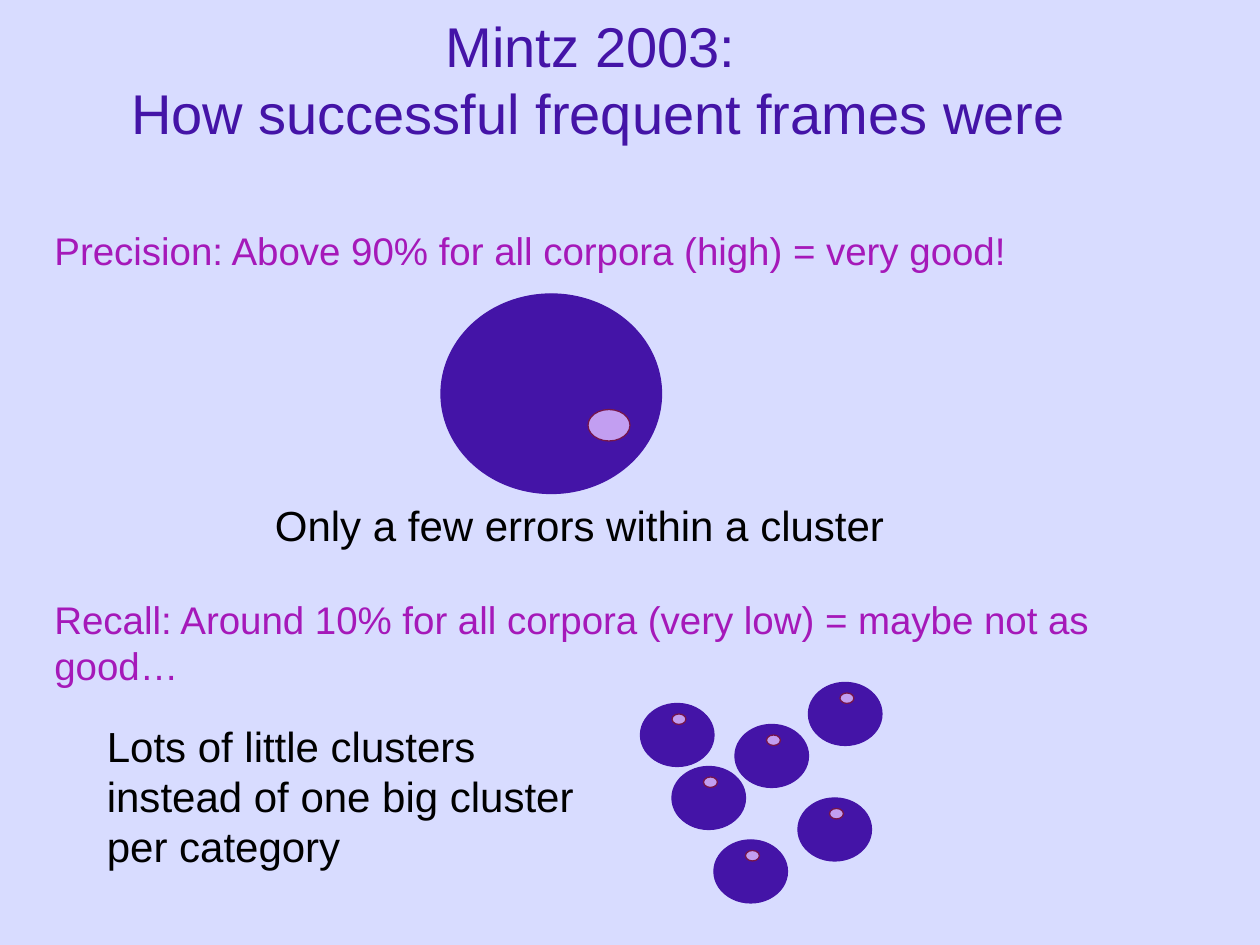
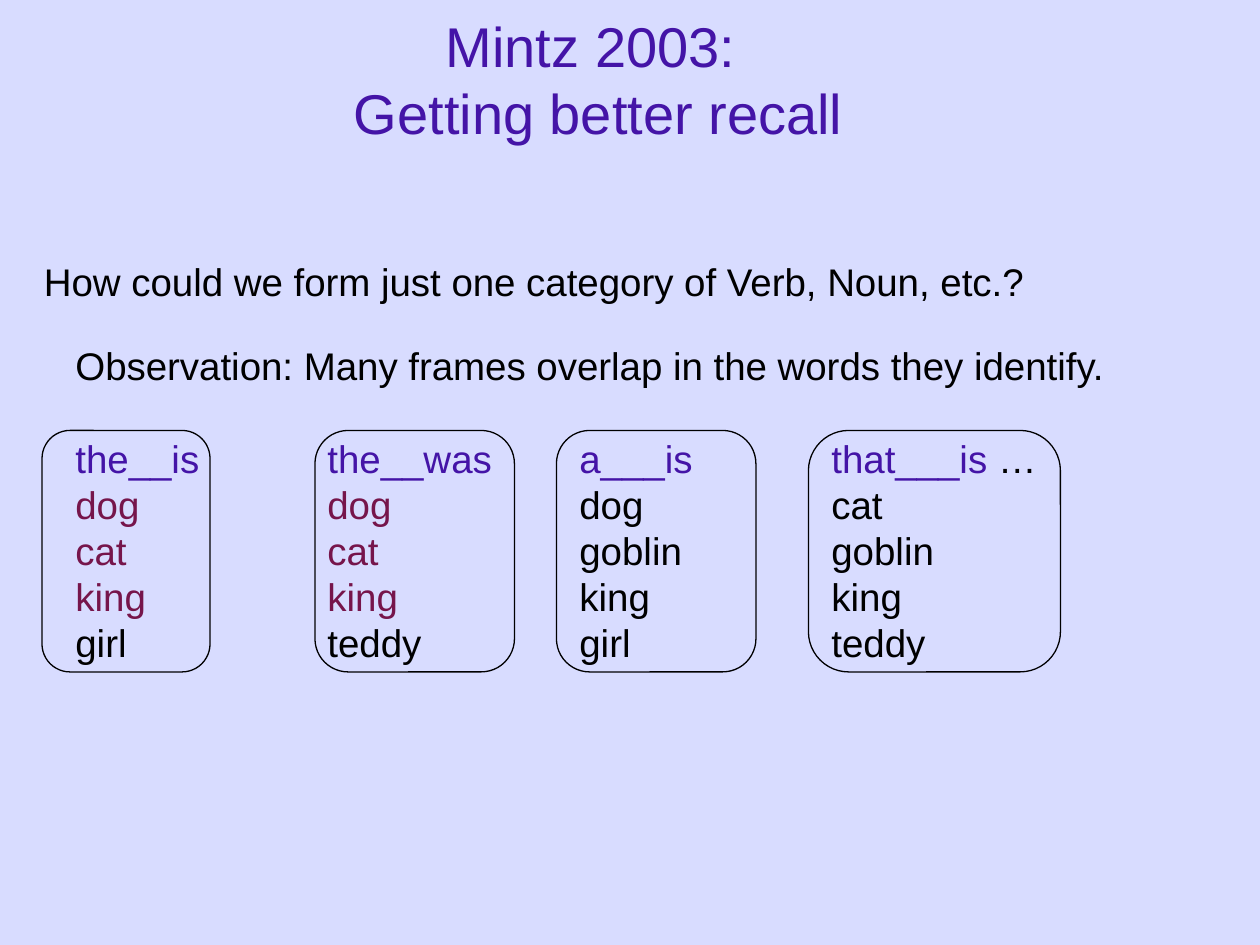
from copy import deepcopy

from lxml import etree
from pptx import Presentation
from pptx.dml.color import RGBColor
from pptx.enum import shapes, text
from pptx.oxml import ns
from pptx.util import Pt

FONT = "Arial"
LINE_HEIGHT = 1.2
COLOURS = {
    "background": "D8DCFF",
    "indigo": "4414A7",
    "magenta": "A519B9",
    "lilac": "C29EF1",
    "wine": "76154B",
    "black": "000000",
}

CLUSTER_SIZE = (42, 36)
CLUSTER_SPOTS = [(420, 414), (366, 402), (384, 438),
                 (462, 390), (456, 456), (408, 480)]

COLUMN_PITCH = 144
FRAMES = ["the__is", "the__was", "a___is", "that___is"]
WORD_ROWS = [
    ["dog", "dog", "dog", "cat"],
    ["cat", "cat", "goblin", "goblin"],
    ["king", "king", "king", "king"],
    ["girl", "teddy", "girl", "teddy"],
]
SHARED_ROWS = 3     # rows whose words match in the first two frames
OUTLINES = [(24, 96), (180, 114), (318, 114), (462, 144)]  # left, width


def colour(name):
    return RGBColor.from_string(COLOURS[name])


def points(*lengths):
    return [Pt(length) for length in lengths]


def format_span(span, size, tint):
    span.font.name = FONT
    span.font.size = Pt(size)
    span.font.color.rgb = colour(tint)


def add_title_page(deck, title):
    page = deck.slides.add_slide(deck.slide_layouts.get_by_name("Title Only"))
    box = page.shapes.title
    box.left, box.top, box.width, box.height = points(18, 0, 648, 90)
    frame = box.text_frame
    frame.word_wrap = True
    frame.auto_size = text.MSO_AUTO_SIZE.NONE
    frame.vertical_anchor = text.MSO_ANCHOR.MIDDLE
    para = frame.paragraphs[0]
    para.text = title
    para.alignment = text.PP_ALIGN.CENTER
    para.line_spacing = Pt(32 * LINE_HEIGHT)
    for span in para.runs:
        format_span(span, 32, "indigo")
    for line_break in para._p.findall(ns.qn("a:br")):
        line_break.append(deepcopy(para.runs[0]._r.rPr))
    return page


def add_text(page, place, paragraphs, size=22, tint="black", wrap=True, gap=0):
    """Add a text box; a paragraph is a string or a list of (text, tint) spans.

    The gap, in lines, stands between the first and second paragraph.
    """
    box = page.shapes.add_textbox(*points(*place))
    frame = box.text_frame
    frame.word_wrap = wrap
    frame.auto_size = text.MSO_AUTO_SIZE.SHAPE_TO_FIT_TEXT
    for number, content in enumerate(paragraphs):
        para = frame.add_paragraph() if number else frame.paragraphs[0]
        para.line_spacing = Pt(size * LINE_HEIGHT)
        if number == 1:
            para.space_before = Pt(gap * size * LINE_HEIGHT)
        spans = [(content, tint)] if isinstance(content, str) else content
        for words, span_tint in spans:
            span = para.add_run()
            span.text = words
            format_span(span, size, span_tint)
    return box


def set_tab_stops(box, pitch, count):
    for para in box.text_frame.paragraphs:
        stops = etree.SubElement(para._p.get_or_add_pPr(), ns.qn("a:tabLst"))
        for number in range(1, count + 1):
            etree.SubElement(stops, ns.qn("a:tab"),
                             pos=str(Pt(pitch * number)), algn="l")


def add_outlined_shape(page, kind, place, line, fill=None):
    shape = page.shapes.add_shape(kind, *points(*place))
    shape.shadow.inherit = False
    if fill:
        shape.fill.solid()
        shape.fill.fore_color.rgb = colour(fill)
    else:
        shape.fill.background()
    shape.line.color.rgb = colour(line)
    shape.line.width = Pt(0.75)
    return shape


def add_cluster(page, place, error_offset, error_size):
    """Draw a dark cluster with one light error inside it."""
    oval = shapes.MSO_SHAPE.OVAL
    error = (place[0] + error_offset[0], place[1] + error_offset[1], *error_size)
    add_outlined_shape(page, oval, place, "indigo", "indigo")
    add_outlined_shape(page, oval, error, "wine", "lilac")


def add_success_page(deck):
    page = add_title_page(
        deck, "Mintz 2003: \vHow successful frequent frames were")
    add_text(page, (24, 126, 660, 324), [
        "Precision: Above 90% for all corpora (high) = very good!",
        "Recall: Around 10% for all corpora (very low) = maybe not as good…",
    ], tint="magenta", gap=7)
    add_cluster(page, (252, 168, 126, 114), (84, 66), (24, 18))
    add_text(page, (150, 282, 363, 36), ["Only a few errors within a cluster"],
             size=24, wrap=False)
    for spot in CLUSTER_SPOTS:
        add_cluster(page, (*spot, *CLUSTER_SIZE), (18, 6), (8, 6))
    add_text(page, (54, 408, 294, 94), [
        "Lots of little clusters instead of one big cluster per category",
    ], size=24)


def add_recall_page(deck):
    page = add_title_page(deck, "Mintz 2003: \vGetting better recall")
    add_text(page, (18, 144, 666, 34),
             ["How could we form just one category of Verb, Noun, etc.?"])
    lines = ["Observation: Many frames overlap in the words they identify.",
             [("\t".join(FRAMES), "indigo"), (" …", "black")]]
    for number, words in enumerate(WORD_ROWS):
        tint = "wine" if number < SHARED_ROWS else "black"
        lines.append([("\t".join(words[:2]), tint),
                      ("\t" + "\t".join(words[2:]), "black")])
    box = add_text(page, (36, 192, 660, 218), lines, gap=1)
    set_tab_stops(box, COLUMN_PITCH, len(FRAMES) - 1)
    for left, width in OUTLINES:
        add_outlined_shape(page, shapes.MSO_SHAPE.ROUNDED_RECTANGLE,
                           (left, 246, width, 138), "black")


def main():
    deck = Presentation()
    deck.slide_width, deck.slide_height = points(720, 540)
    backdrop = deck.slide_master.background.fill
    backdrop.solid()
    backdrop.fore_color.rgb = colour("background")
    add_success_page(deck)
    add_recall_page(deck)
    deck.save("out.pptx")


if __name__ == "__main__":
    main()
